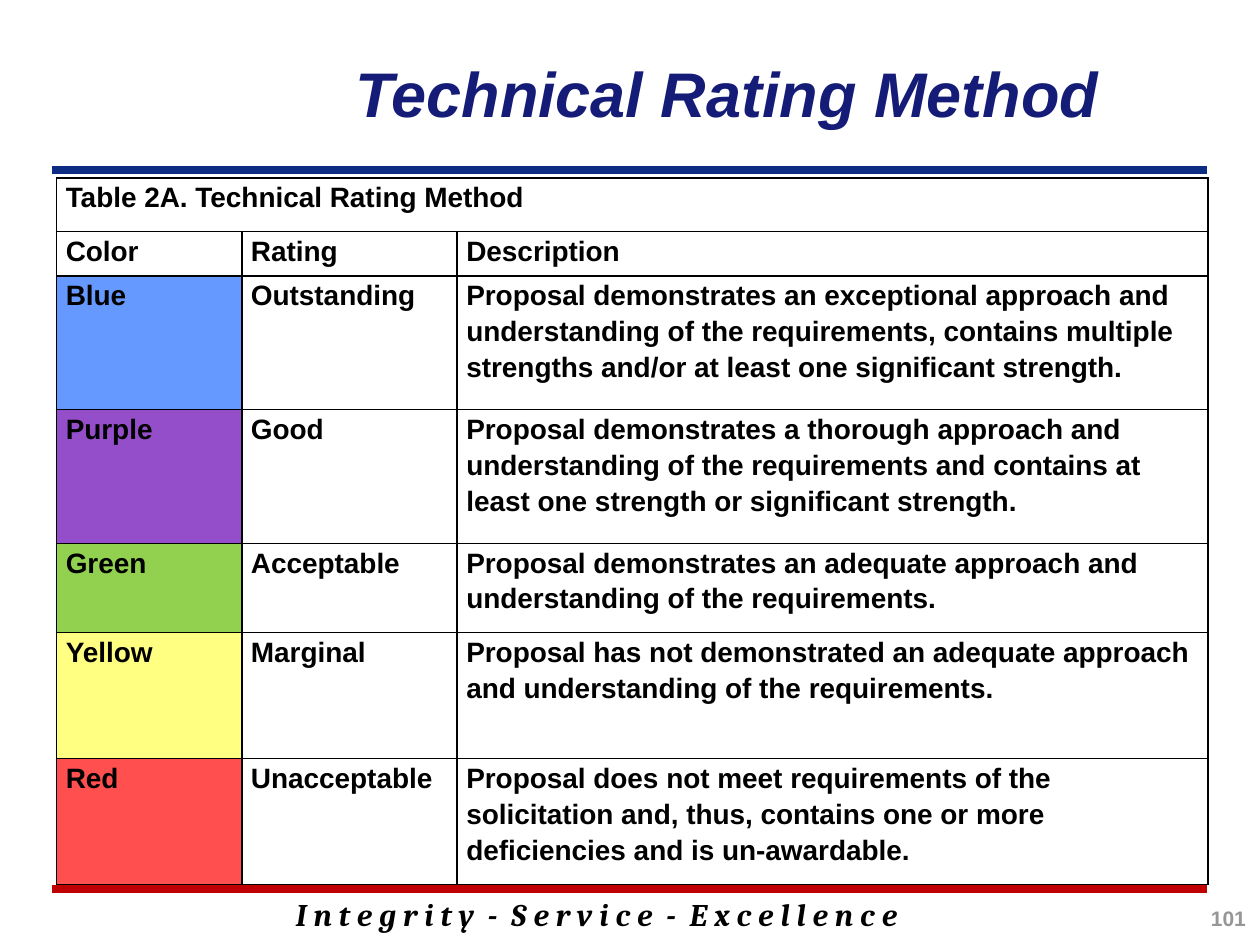
from pptx import Presentation
from pptx.dml.color import RGBColor
from pptx.enum.shapes import MSO_CONNECTOR
from pptx.enum.text import MSO_ANCHOR, PP_ALIGN
from pptx.oxml.ns import qn
from pptx.util import Pt
from lxml import etree

STRAIGHT = MSO_CONNECTOR.STRAIGHT
MIDDLE, TOP = MSO_ANCHOR.MIDDLE, MSO_ANCHOR.TOP
LEFT, RIGHT = PP_ALIGN.LEFT, PP_ALIGN.RIGHT

COLUMNS = [105.8, 123.1, 429.1]
ROWS = [
    (30.6, None, ["Table 2A. Technical Rating Method"]),
    (25.4, None, ["Color", "Rating", "Description"]),
    (76.4, "6699FF", ["Blue", "Outstanding",
     "Proposal demonstrates an exceptional approach and understanding of the requirements, "
     "contains multiple strengths and/or at least one significant strength."]),
    (76.4, "954ECA", ["Purple", "Good",
     "Proposal demonstrates a thorough approach and understanding of the requirements "
     "and contains at least one strength or significant strength."]),
    (51.1, "92D050", ["Green", "Acceptable",
     "Proposal demonstrates an adequate approach and understanding of the requirements."]),
    (72, "FFFF81", ["Yellow", "Marginal",
     "Proposal has not demonstrated an adequate approach and understanding "
     "of the requirements."]),
    (72, "FF4F4F", ["Red", "Unacceptable",
     "Proposal does not meet requirements of the solicitation and, thus, "
     "contains one or more deficiencies and is un-awardable."]),
]


def rgb(color):
    return RGBColor.from_string(color)


class Deck:
    font = "Arial"
    black = "000000"
    border = 1

    def __init__(self, width, height):
        self.prs = Presentation()
        self.prs.slide_width, self.prs.slide_height = Pt(width), Pt(height)
        self.s = self.prs.slides.add_slide(self.prs.slide_layouts[5])

    def set_text(self, tf, text, size, color, align=LEFT, italic=False, font=None):
        p = tf.paragraphs[0]
        p.text = text
        p.alignment = align
        f = p.font
        f.name, f.size, f.bold, f.italic = font or self.font, Pt(size), True, italic
        f.color.rgb = rgb(color)
        return p

    def title(self, x, y, w, h, text, size, color):
        sp = self.s.shapes.title
        sp.left, sp.top, sp.width, sp.height = Pt(x), Pt(y), Pt(w), Pt(h)
        sp.text_frame.vertical_anchor = MIDDLE
        self.set_text(sp.text_frame, text, size, color, RIGHT, italic=True)

    def text(self, x, y, w, h, text, size, color, **style):
        tf = self.s.shapes.add_textbox(Pt(x), Pt(y), Pt(w), Pt(h)).text_frame
        tf.word_wrap = True
        self.set_text(tf, text, size, color, **style)

    def rule(self, x1, x2, y, color, width):
        line = self.s.shapes.add_connector(STRAIGHT, Pt(x1), Pt(y), Pt(x2), Pt(y))
        line.line.color.rgb = rgb(color)
        line.line.width = Pt(width)
        etree.SubElement(line._element.spPr, qn("a:effectLst"))

    def cell_borders(self, cell):
        tcPr = cell._tc.get_or_add_tcPr()
        for side in ("lnL", "lnR", "lnT", "lnB"):
            ln = etree.SubElement(tcPr, qn(f"a:{side}"), w=str(Pt(self.border)))
            fill = etree.SubElement(ln, qn("a:solidFill"))
            etree.SubElement(fill, qn("a:srgbClr"), val=self.black)

    def table(self, x, y, columns, rows, size):
        height = sum(row[0] for row in rows)
        table = self.s.shapes.add_table(len(rows), len(columns), Pt(x), Pt(y),
                                        Pt(sum(columns)), Pt(height)).table
        table.first_row = table.horz_banding = False
        for column, width in zip(table.columns, columns):
            column.width = Pt(width)
        for i, (row_height, color, texts) in enumerate(rows):
            table.rows[i].height = Pt(row_height)
            for j in range(len(columns)):
                cell = table.cell(i, j)
                self.cell_borders(cell)
                if color and j == 0:
                    cell.fill.solid()
                    cell.fill.fore_color.rgb = rgb(color)
                else:
                    cell.fill.background()
                cell.margin_left = cell.margin_right = Pt(5.2)
                cell.margin_top = cell.margin_bottom = 0
                cell.vertical_anchor = TOP
                if j < len(texts):
                    p = self.set_text(cell.text_frame, texts[j], size, self.black)
                    p.line_spacing = 1.15
            if len(texts) == 1:
                table.cell(i, 0).merge(table.cell(i, len(columns) - 1))


def main():
    deck = Deck(720, 540)

    # Rules and motto
    deck.rule(30, 690, 508, "C00000", 4.5)
    deck.rule(30, 690, 97, "0C2D83", 4.5)
    deck.text(162, 508, 438, 29,
              "I n t e g r i t y  -  S e r v i c e  -  E x c e l l e n c e",
              18, deck.black, italic=True, font="Cambria")

    # Title and page number
    deck.title(103.5, 8.6, 541.5, 88, "Technical Rating Method ", 36, "151C77")
    deck.text(629, 514, 90, 24, "101", 12, "969696", align=RIGHT)

    # Rating table
    deck.table(32.4, 101.7, COLUMNS, ROWS, 16)

    deck.prs.save("out.pptx")


if __name__ == "__main__":
    main()
